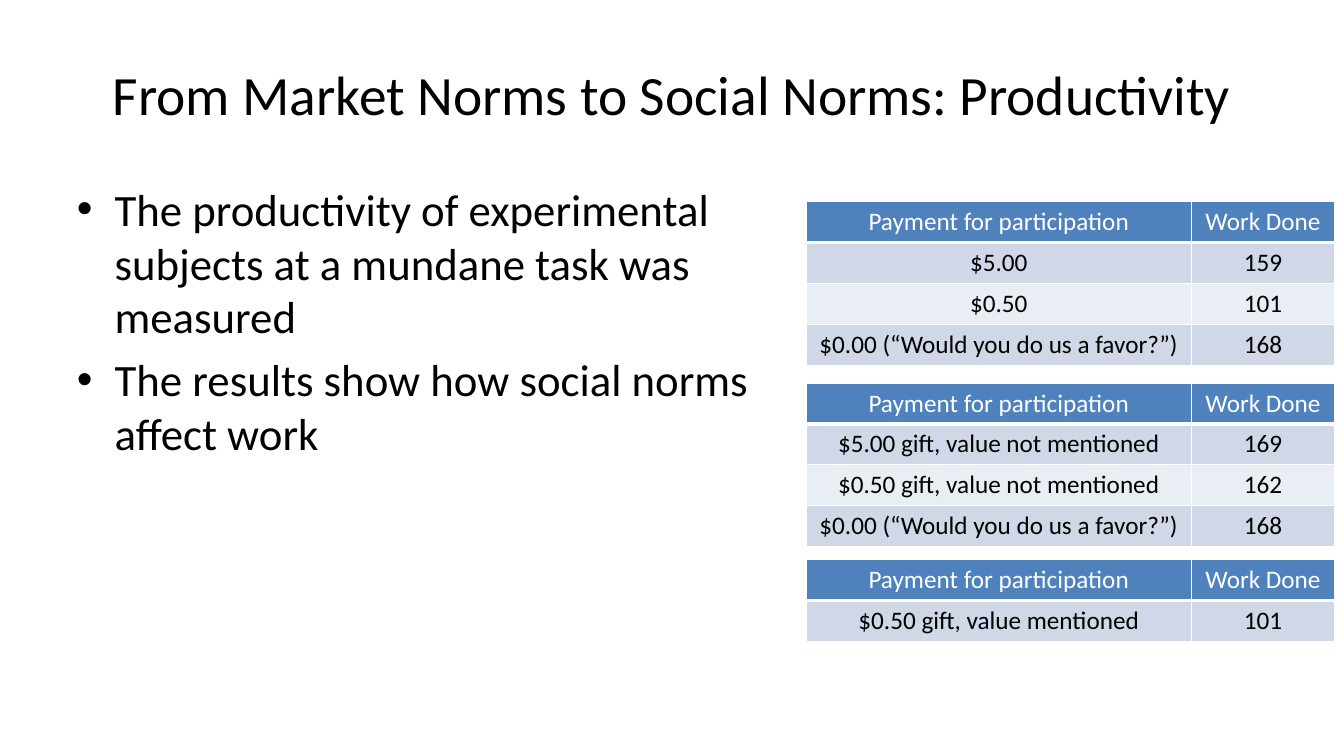
from dataclasses import dataclass

from pptx import Presentation
from pptx.dml.color import RGBColor
from pptx.enum import text as t
from pptx.oxml import parse_xml
from pptx.oxml.ns import nsdecls
from pptx.util import Cm, Pt

FONT = "Calibri"
BLACK, WHITE = "000000", "FFFFFF"
HEADER_FILL = "4F81BD"
BAND_FILLS = ("D0D8E8", "E9EDF4")
HEADER = ("Payment for participation", "Work Done")
TABLE_LEFT = 20.32
COLUMN_WIDTHS = (9.7, 3.62)
ROW_HEIGHT = 1.03
BULLETS = (
    "The productivity of experimental subjects at a mundane task was measured",
    "The results show how social norms affect work",
)


@dataclass(frozen=True)
class ResultTable:
    top: float
    rows: tuple[tuple[str, str], ...]


FAVOR_ROW = ("$0.00 (“Would you do us a favor?”)", "168")
RESULT_TABLES = (
    ResultTable(5.08, (("$5.00", "159"), ("$0.50", "101"), FAVOR_ROW)),
    ResultTable(9.65, (
        ("$5.00 gift, value not mentioned", "169"),
        ("$0.50 gift, value not mentioned", "162"),
        FAVOR_ROW,
    )),
    ResultTable(14.1, (("$0.50 gift, value mentioned", "101"),)),
)


def color(hex_value: str) -> RGBColor:
    return RGBColor.from_string(hex_value)


def write(paragraph, content: str, *, size: float, hex_color: str = BLACK,
          align=t.PP_ALIGN.CENTER) -> None:
    paragraph.alignment = align
    run = paragraph.add_run()
    run.text = content
    run.font.name = FONT
    run.font.size = Pt(size)
    run.font.bold = False
    run.font.color.rgb = color(hex_color)


def place(shape, left: float, top: float, width: float, height: float) -> None:
    shape.left, shape.top = Cm(left), Cm(top)
    shape.width, shape.height = Cm(width), Cm(height)


def add_bullet(paragraph, content: str) -> None:
    write(paragraph, content, size=32, align=t.PP_ALIGN.LEFT)
    paragraph.space_before = Pt(6.4)
    properties = paragraph._p.get_or_add_pPr()
    properties.set("marL", str(Cm(0.95)))
    properties.set("indent", str(-Cm(0.95)))
    properties.append(parse_xml(f'<a:buFont {nsdecls("a")} typeface="Arial"/>'))
    properties.append(parse_xml(f'<a:buChar {nsdecls("a")} char="•"/>'))


def add_borders(cell, bottom: float) -> None:
    properties = cell._tc.get_or_add_tcPr()
    for side, width in {"L": 1, "R": 1, "T": 1, "B": bottom}.items():
        properties.append(parse_xml(
            f'<a:ln{side} {nsdecls("a")} w="{Pt(width)}"><a:solidFill>'
            f'<a:srgbClr val="{WHITE}"/></a:solidFill></a:ln{side}>'))


def add_result_table(slide, result: ResultTable) -> None:
    rows = (HEADER, *result.rows)
    table = slide.shapes.add_table(
        len(rows), len(HEADER), Cm(TABLE_LEFT), Cm(result.top),
        Cm(sum(COLUMN_WIDTHS)), Cm(ROW_HEIGHT * len(rows))).table
    for column, width in zip(table.columns, COLUMN_WIDTHS):
        column.width = Cm(width)
    for row_index, values in enumerate(rows):
        table.rows[row_index].height = Cm(ROW_HEIGHT)
        is_header = row_index == 0
        fill = HEADER_FILL if is_header else BAND_FILLS[(row_index - 1) % 2]
        for column_index, value in enumerate(values):
            cell = table.cell(row_index, column_index)
            add_borders(cell, bottom=3 if is_header else 1)
            cell.fill.solid()
            cell.fill.fore_color.rgb = color(fill)
            write(cell.text_frame.paragraphs[0], value, size=18,
                  hex_color=WHITE if is_header else BLACK)


def main() -> None:
    presentation = Presentation()
    presentation.slide_width, presentation.slide_height = Cm(33.87), Cm(19.05)
    slide = presentation.slides.add_slide(presentation.slide_layouts[5])

    title = slide.shapes.title
    place(title, 1.69, 0.76, 30.48, 3.18)
    title.text_frame.vertical_anchor = t.MSO_ANCHOR.MIDDLE
    write(title.text_frame.paragraphs[0],
          "From Market Norms to Social Norms: Productivity", size=39.6)

    body = slide.shapes.add_textbox(Cm(1.69), Cm(4.45), Cm(18.64), Cm(12.57))
    frame = body.text_frame
    frame.word_wrap = True
    for index, bullet in enumerate(BULLETS):
        paragraph = frame.add_paragraph() if index else frame.paragraphs[0]
        add_bullet(paragraph, bullet)

    for result in RESULT_TABLES:
        add_result_table(slide, result)
    presentation.save("out.pptx")


if __name__ == "__main__":
    main()
